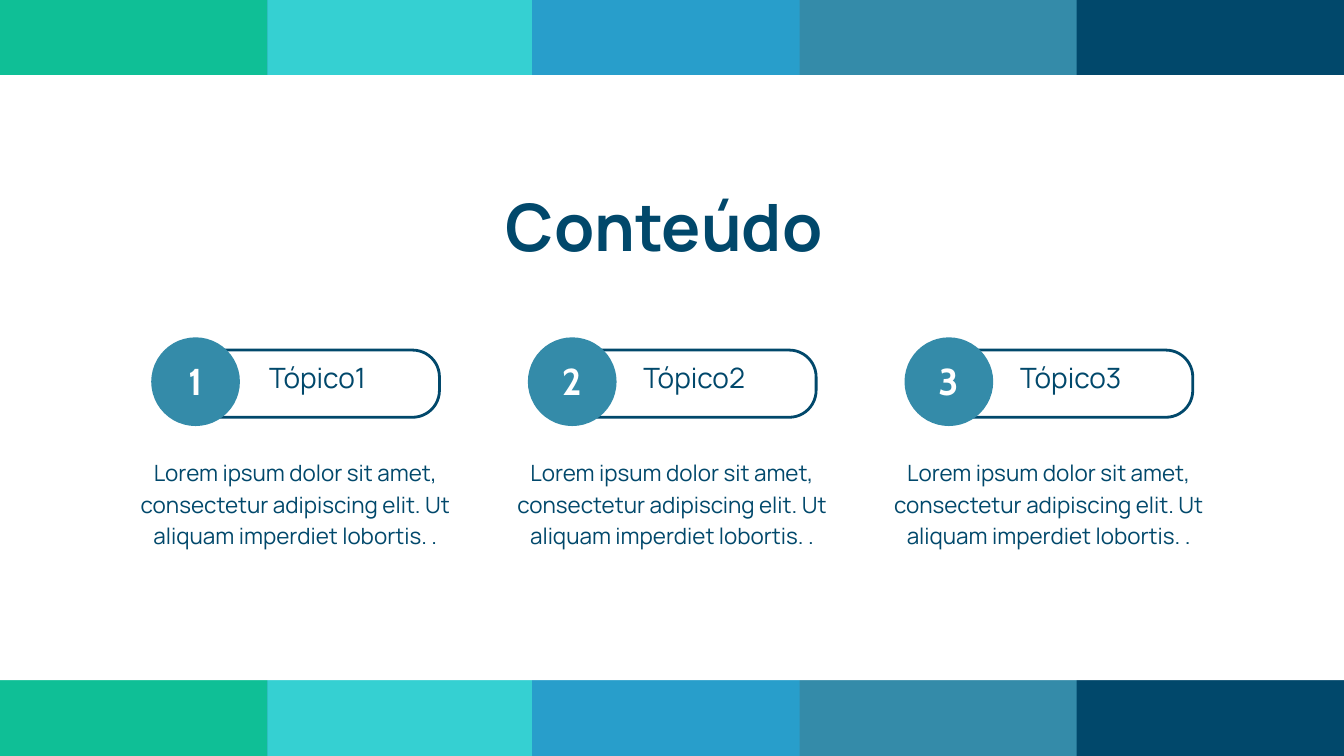
from pptx import Presentation
from pptx.dml.color import RGBColor
from pptx.enum.shapes import MSO_SHAPE as Preset
from pptx.enum.text import MSO_ANCHOR as Anchor, PP_ALIGN as Align
from pptx.util import Inches, Pt

GREEN = RGBColor(0x0F, 0xBF, 0x96)
TURQUOISE = RGBColor(0x35, 0xD0, 0xD2)
BLUE = RGBColor(0x28, 0x9E, 0xCB)
TEAL = RGBColor(0x34, 0x8B, 0xA9)
NAVY = RGBColor(0x01, 0x48, 0x6B)
WHITE = RGBColor(0xFF, 0xFF, 0xFF)

STRIPES = [(0, GREEN), (3.98, TURQUOISE), (7.92, BLUE), (12.01, TEAL), (16.02, NAVY)]
TOPICS = ["Tópico1", "Tópico2", "Tópico3"]
DESCRIPTION = (
    "Lorem ipsum dolor sit amet, consectetur adipiscing elit. "
    "Ut aliquam imperdiet lobortis. ."
)
FIRST_LEFT = 1.88
TOPIC_STEP = 11.21 / 2


def add_shape(slide, preset, left, top, width, height, fill, line=None):
    """Add a flat filled shape, outlined only when a line colour is given."""
    shape = slide.shapes.add_shape(
        preset, Inches(left), Inches(top), Inches(width), Inches(height)
    )
    shape.shadow.inherit = False
    shape.fill.solid()
    shape.fill.fore_color.rgb = fill
    if line is None:
        shape.line.fill.background()
    else:
        shape.line.color.rgb = line
        shape.line.width = Pt(3)
    return shape


def add_text(slide, text, left, top, width, height, size, spacing, color=NAVY,
             font="Manrope", bold=False, align=Align.CENTER, anchor=Anchor.TOP, inset=0):
    """Add a wrapped text box holding one paragraph."""
    box = slide.shapes.add_textbox(
        Inches(left), Inches(top), Inches(width), Inches(height)
    )
    frame = box.text_frame
    frame.word_wrap = True
    frame.vertical_anchor = anchor
    frame.margin_left = frame.margin_right = Inches(inset)
    frame.margin_top = frame.margin_bottom = Inches(inset)
    para = frame.paragraphs[0]
    para.alignment = align
    para.line_spacing = Pt(spacing)
    span = para.add_run()
    span.text = text
    span.font.name = font
    span.font.size = Pt(size)
    span.font.bold = bold
    span.font.color.rgb = color


def add_topic(slide, left, number, title):
    """Add a numbered topic pill with its description below."""
    pill_left = left + 1.03
    pill = add_shape(slide, Preset.ROUNDED_RECTANGLE, pill_left, 5.21, 3.63, 1, WHITE, NAVY)
    pill.adjustments[0] = 0.4
    add_text(slide, title, pill_left, 4.93, 3.63, 1.28, 30, 42,
             anchor=Anchor.MIDDLE, inset=0.06)
    add_shape(slide, Preset.OVAL, left + 0.37, 5.02, 1.32, 1.32, TEAL)
    add_text(slide, str(number), left + 0.49, 5, 1.07, 1.21, 40, 56, color=WHITE,
             font="Cabin", bold=True, anchor=Anchor.MIDDLE, inset=0.06)
    add_text(slide, DESCRIPTION, left, 6.77, 5.03, 1.38, 24, 33.6)


def main():
    """Build the contents slide."""
    deck = Presentation()
    deck.slide_width = Inches(20)
    deck.slide_height = Inches(11.25)
    page = deck.slides.add_slide(deck.slide_layouts[6])
    page.background.fill.solid()
    page.background.fill.fore_color.rgb = TEAL

    for left, color in STRIPES:
        add_shape(page, Preset.RECTANGLE, left, 0, 3.98, 11.25, color)
    add_shape(page, Preset.RECTANGLE, 0, 1.12, 20, 9, WHITE)
    add_text(page, "Conteúdo", 7.53, 2.58, 4.94, 1.37, 70, 98,
             bold=True, align=Align.LEFT)
    for index, title in enumerate(TOPICS):
        add_topic(page, FIRST_LEFT + index * TOPIC_STEP, index + 1, title)

    deck.save("out.pptx")


if __name__ == "__main__":
    main()
